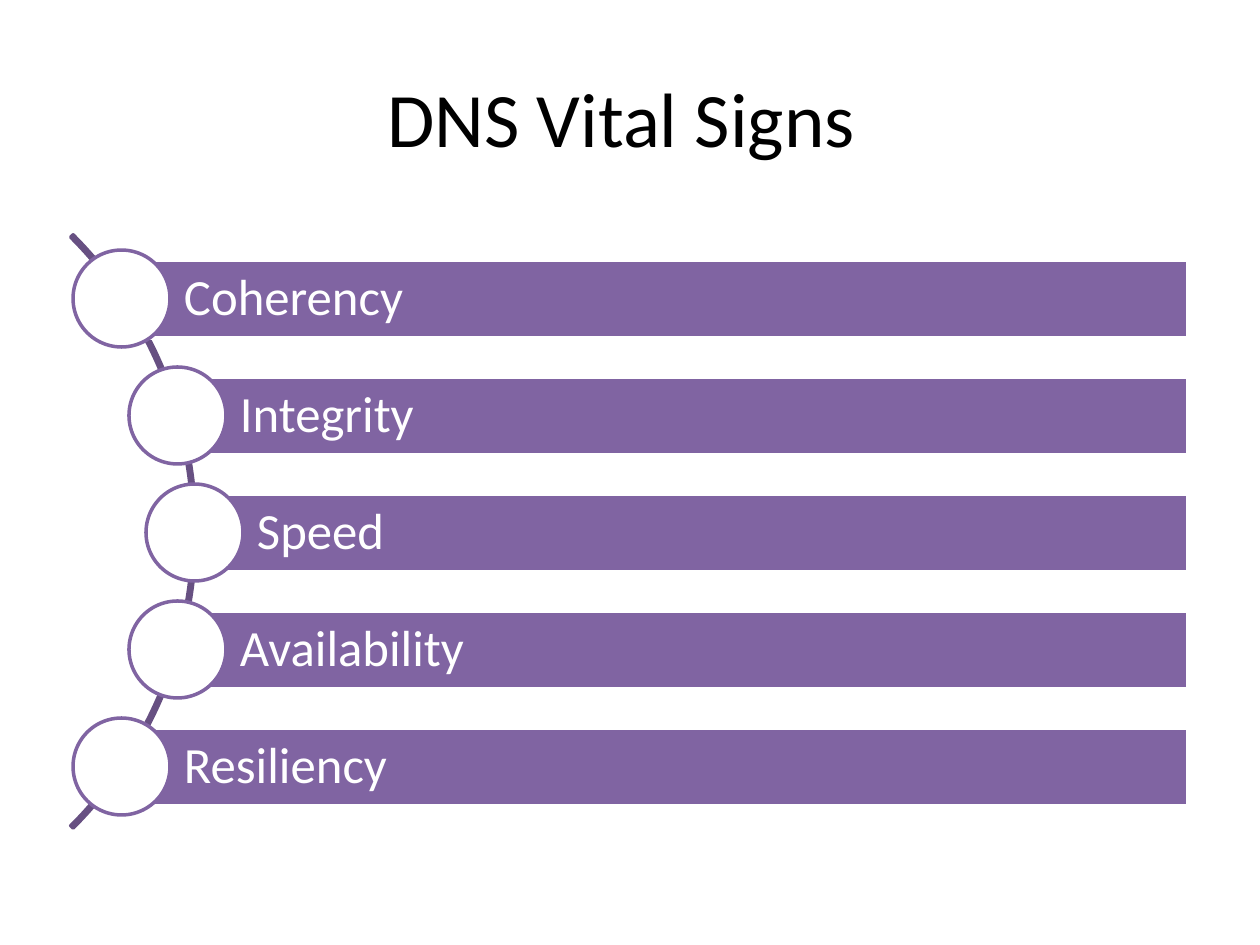
"""Build the DNS vital signs slide: five bars along a curve."""
from pptx import Presentation, util as u
from pptx.dml.color import RGBColor
from pptx.enum import shapes, text

PX = 914400 / 126
BLACK = RGBColor(0x00, 0x00, 0x00)
WHITE = RGBColor(0xFF, 0xFF, 0xFF)
PURPLE = RGBColor(0x80, 0x64, 0xA2)
DARK = RGBColor(0x67, 0x50, 0x82)
KIND = shapes.MSO_SHAPE
STEP = 117
RIGHT = 1188
ROWS = [
    ("Coherency", 122),
    ("Integrity", 178),
    ("Speed", 195),
    ("Availability", 178),
    ("Resiliency", 122),
]


def write(shape, words, size, color, align, inset=(13, 6, 13, 6), space=1.0):
    frame = shape.text_frame
    frame.word_wrap = True
    frame.auto_size = text.MSO_AUTO_SIZE.NONE
    frame.vertical_anchor = text.MSO_ANCHOR.MIDDLE
    left, top, right, base = [round(n * PX) for n in inset]
    frame.margin_left, frame.margin_top = left, top
    frame.margin_right, frame.margin_bottom = right, base
    para = frame.paragraphs[0]
    para.alignment = align
    para.line_spacing = space
    run = para.add_run()
    run.text = words
    run.font.name = "Calibri"
    run.font.size = u.Pt(size)
    run.font.color.rgb = color


def draw(kind, box, line, fill=None):
    shape = slide.shapes.add_shape(kind, *[round(n * PX) for n in box])
    shape.shadow.inherit = False
    if fill is None:
        shape.fill.background()
    else:
        shape.fill.solid()
        shape.fill.fore_color.rgb = fill
    shape.line.color.rgb = line
    shape.line.width = u.Pt(2)
    return shape


deck = Presentation()
deck.slide_width = round(1260 * PX)
deck.slide_height = round(945 * PX)
slide = deck.slides.add_slide(deck.slide_layouts[5])

title = slide.shapes.title
title.left, title.top = round(63 * PX), round(38 * PX)
title.width, title.height = round(1134 * PX), round(157 * PX)
write(title, "DNS Vital Signs ", 44, BLACK, text.PP_ALIGN.CENTER)

arc = draw(KIND.BLOCK_ARC, (-643, 112, 839, 839), DARK)
for i, value in enumerate((189, 27, 0.004)):
    arc.adjustments[i] = value

for i, (name, x) in enumerate(ROWS):
    y = i * STEP
    bar = draw(KIND.RECTANGLE, (x, 260 + y, RIGHT - x, 78), WHITE, PURPLE)
    write(bar, name, 29, WHITE, text.PP_ALIGN.LEFT, (62, 10, 10, 10), 0.9)
    draw(KIND.OVAL, (x - 49, 250 + y, 97, 97), PURPLE, WHITE)

deck.save("out.pptx")
